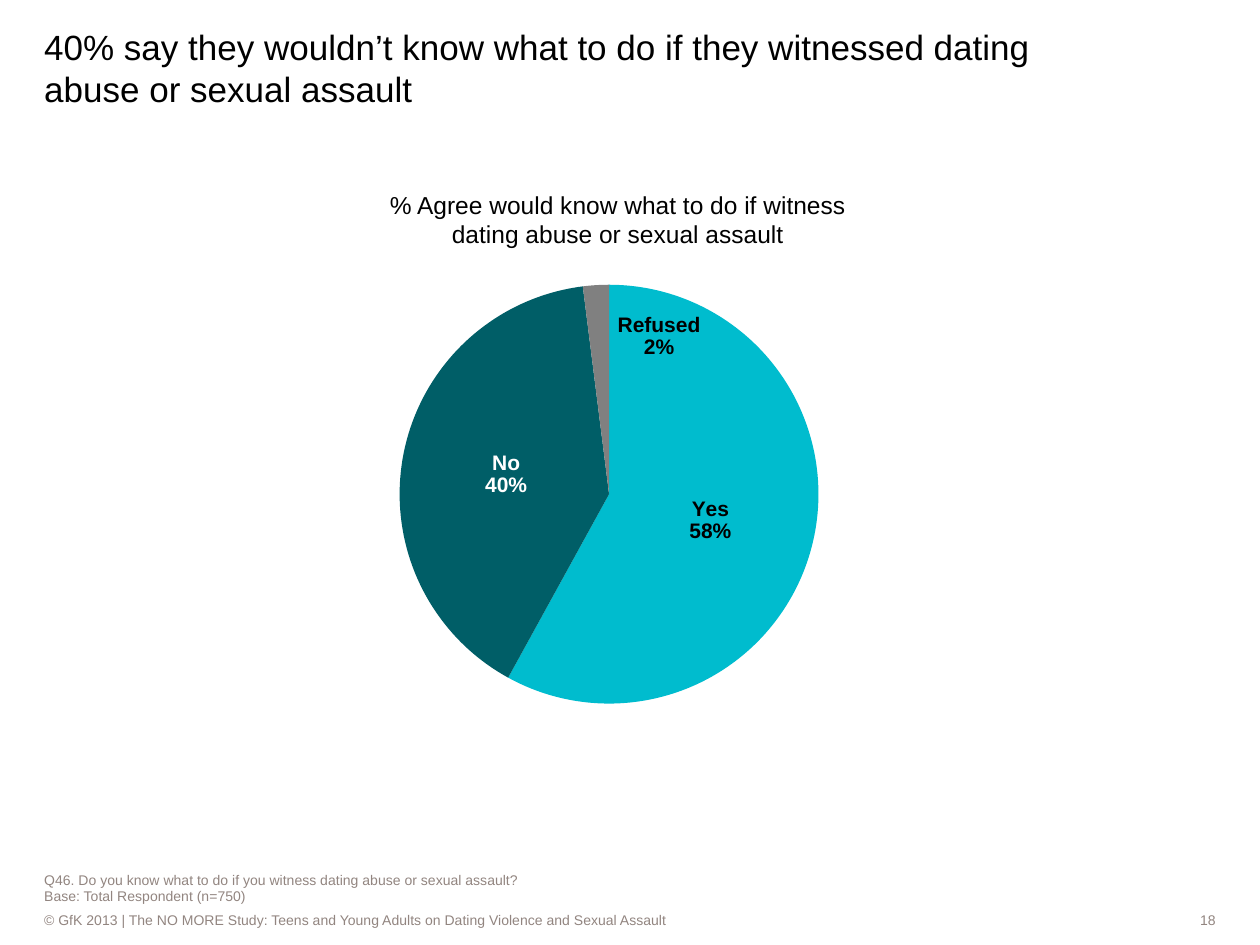
from dataclasses import dataclass

from lxml.etree import SubElement
from pptx import Presentation
from pptx.chart.data import CategoryChartData
from pptx.dml.color import RGBColor
from pptx.enum.chart import XL_CHART_TYPE, XL_LABEL_POSITION
from pptx.enum.shapes import MSO_SHAPE
from pptx.enum.text import MSO_ANCHOR, PP_ALIGN
from pptx.oxml import parse_xml
from pptx.oxml.ns import nsdecls, qn
from pptx.util import Cm, Pt


@dataclass(frozen=True)
class Theme:
    font: str = "Arial"
    black: str = "000000"
    white: str = "FFFFFF"
    note: str = "928580"
    cyan: str = "00BCCE"
    teal: str = "005E67"
    grey: str = "808080"
    title: int = 20
    chart: int = 18
    head: int = 14
    label: int = 12
    small: int = 8


def layout(**parts):
    """Chart layout XML from tag names and their values."""
    body = "".join(f'<c:{tag} val="{val}"/>' for tag, val in parts.items())
    return parse_xml(f'<c:layout {nsdecls("c")}><c:manualLayout>{body}'
                     '</c:manualLayout></c:layout>')


class Deck:
    def __init__(self, theme):
        self.theme = theme
        self.prs = Presentation()
        self.prs.slide_width, self.prs.slide_height = Cm(25.4), Cm(19.05)
        self.slide = self.prs.slides.add_slide(self.prs.slide_layouts[1])

    def style(self, font, size, color, bold=False):
        font.name, font.size, font.bold = self.theme.font, Pt(size), bold
        font.color.rgb = RGBColor.from_string(color)

    def fill_text(self, shape, lines, size, color, align=PP_ALIGN.LEFT,
                  anchor=MSO_ANCHOR.MIDDLE, foot=0, pitch=None):
        """Fill a shape; foot is the bottom inset, pitch the line height."""
        frame = shape.text_frame
        frame.word_wrap, frame.vertical_anchor = True, anchor
        frame.margin_left = frame.margin_right = frame.margin_top = 0
        frame.margin_bottom = Cm(foot)
        for i, line in enumerate(lines):
            para = frame.add_paragraph() if i else frame.paragraphs[0]
            props = para._p.get_or_add_pPr()
            props.set("marL", "0")
            props.set("indent", "0")
            SubElement(props, qn("a:buNone"))
            para.alignment = align
            para.space_before = Pt(0)
            if pitch:
                para.line_spacing = Pt(pitch)
            run = para.add_run()
            run.text = line
            self.style(run.font, size, color)

    def place(self, index, box, lines, size, color, **opts):
        """Move and fill a placeholder of the layout."""
        shape = self.slide.placeholders[index]
        shape.left, shape.top, shape.width, shape.height = map(Cm, box)
        self.fill_text(shape, lines, size, color,
                       anchor=MSO_ANCHOR.BOTTOM, **opts)

    def text(self, box, line, size, color, align):
        shape = self.slide.shapes.add_textbox(*map(Cm, box))
        self.fill_text(shape, [line], size, color, align)

    def strip(self, box, line, align):
        shape = self.slide.shapes.add_shape(MSO_SHAPE.RECTANGLE, *map(Cm, box))
        shape.shadow.inherit = False
        shape.fill.solid()
        shape.fill.fore_color.rgb = RGBColor.from_string(self.theme.white)
        shape.line.fill.background()
        self.fill_text(shape, [line], self.theme.small, self.theme.note, align)

    def pie(self, box, slices, plot):
        """Slices are (name, value, fill, label colour, label shift)."""
        data = CategoryChartData(number_format="0%")
        data.categories = [part[0] for part in slices]
        data.add_series("Series 1", [part[1] for part in slices])
        chart = self.slide.shapes.add_chart(
            XL_CHART_TYPE.PIE, *map(Cm, box), data).chart
        chart.has_title = chart.has_legend = False
        self.style(chart.font, self.theme.chart, self.theme.black)
        area = chart._chartSpace.chart.plotArea
        for old in area.findall(qn("c:layout")):
            area.remove(old)
        area.insert(0, layout(layoutTarget="inner", xMode="edge",
                              yMode="edge", **plot))
        chart.plots[0].vary_by_categories = True
        series = chart.plots[0].series[0]
        for i, (_, _, fill, color, shift) in enumerate(slices):
            point = series.points[i]
            point.format.fill.solid()
            point.format.fill.fore_color.rgb = RGBColor.from_string(fill)
            point.format.line.fill.background()
            label = point.data_label
            self.style(label.font, self.theme.label, color, True)
            label.position = XL_LABEL_POSITION.CENTER
            node = series._element.findall(".//" + qn("c:dLbl"))[i]
            node.find(qn("c:showCatName")).set("val", "1")
            node.find(qn("c:showPercent")).set("val", "0")
            SubElement(node, qn("c:separator")).text = "\n"
            node.insert(1, parse_xml(f'<c:numFmt {nsdecls("c")} '
                                     'formatCode="0%" sourceLinked="0"/>'))
            if shift:
                node.insert(1, layout(x=shift[0], y=shift[1]))
        marks = series.data_labels
        marks.show_value = marks.show_category_name = True
        marks.number_format, marks.number_format_is_linked = "0%", False
        self.style(marks.font, self.theme.label, self.theme.black, True)
        for lead in series._element.iter(qn("c:showLeaderLines")):
            lead.set("val", "0")


def main():
    look = Theme()
    deck = Deck(look)
    left, base, thin = 0.89, 18.34, 0.41
    deck.strip((left, base, 19.61, thin),
               "© GfK 2013 | The NO MORE Study: Teens and Young Adults on "
               "Dating Violence and Sexual Assault", PP_ALIGN.LEFT)
    deck.strip((20.9, base, 3.61, thin), "18", PP_ALIGN.RIGHT)
    deck.place(1, (left, 17.55, 23.6, 0.79),
               ["Q46. Do you know what to do if you witness dating abuse "
                "or sexual assault?", "Base: Total Respondent (n=750)"],
               look.small, look.note, foot=0.1)
    deck.place(0, (left, 0.64, 21.34, 1.57),
               ["40% say they wouldn’t know what to do if they witnessed "
                "dating abuse or sexual assault"],
               look.title, look.black, pitch=24)
    deck.pie((4.45, 3.71, 16.31, 10.69),
             [("Yes", 0.58, look.cyan, look.black, None),
              ("No", 0.4, look.teal, look.white, None),
              ("Refused", 0.02, look.grey, look.black, (0.07, -0.1))],
             {"x": 0.16, "y": 0.19, "w": 0.64, "h": 0.79})
    deck.text((7.82, 3.81, 9.27, 1.22),
              "% Agree would know what to do if witness dating abuse "
              "or sexual assault", look.head, look.black, PP_ALIGN.CENTER)
    deck.prs.save("out.pptx")


if __name__ == "__main__":
    main()
